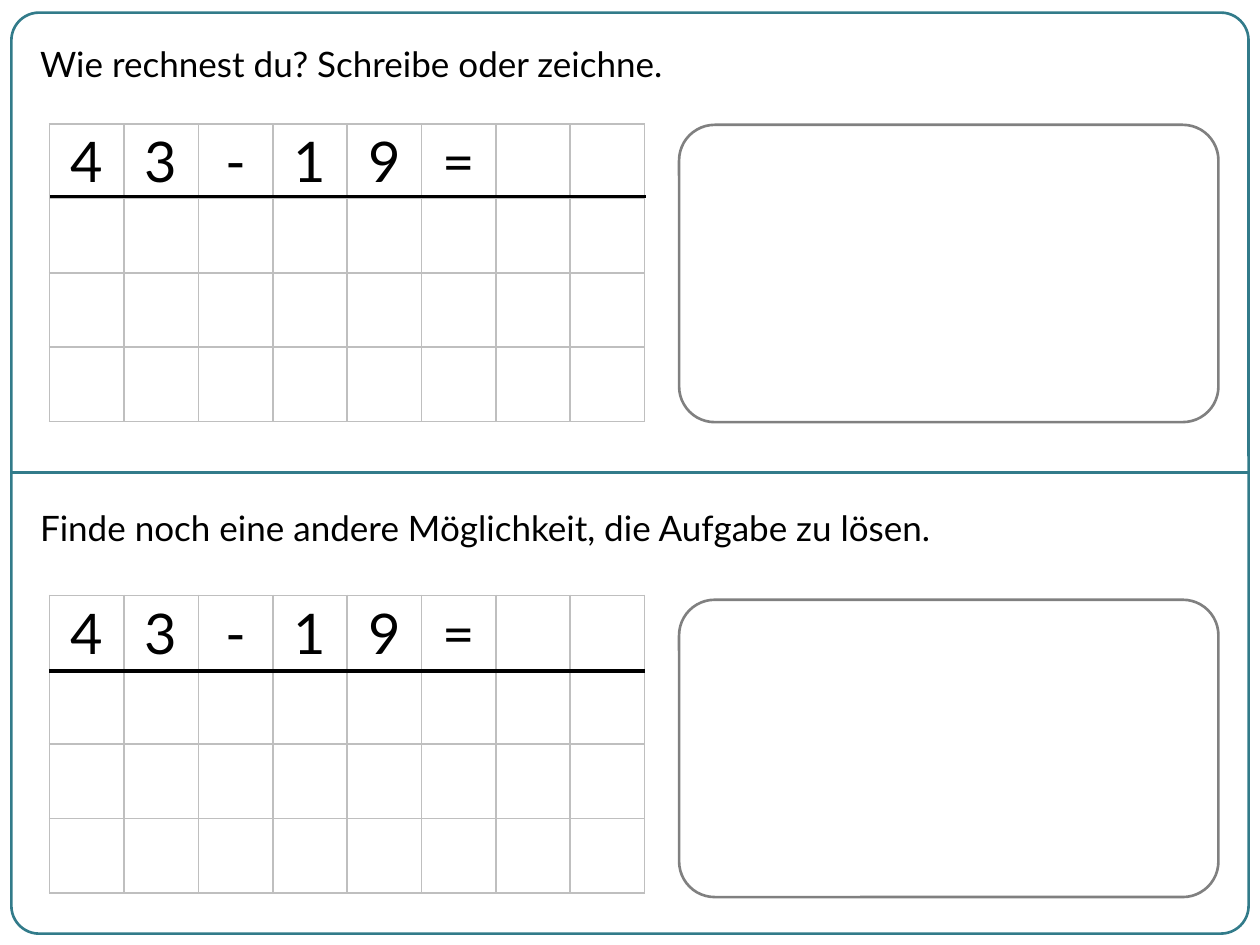
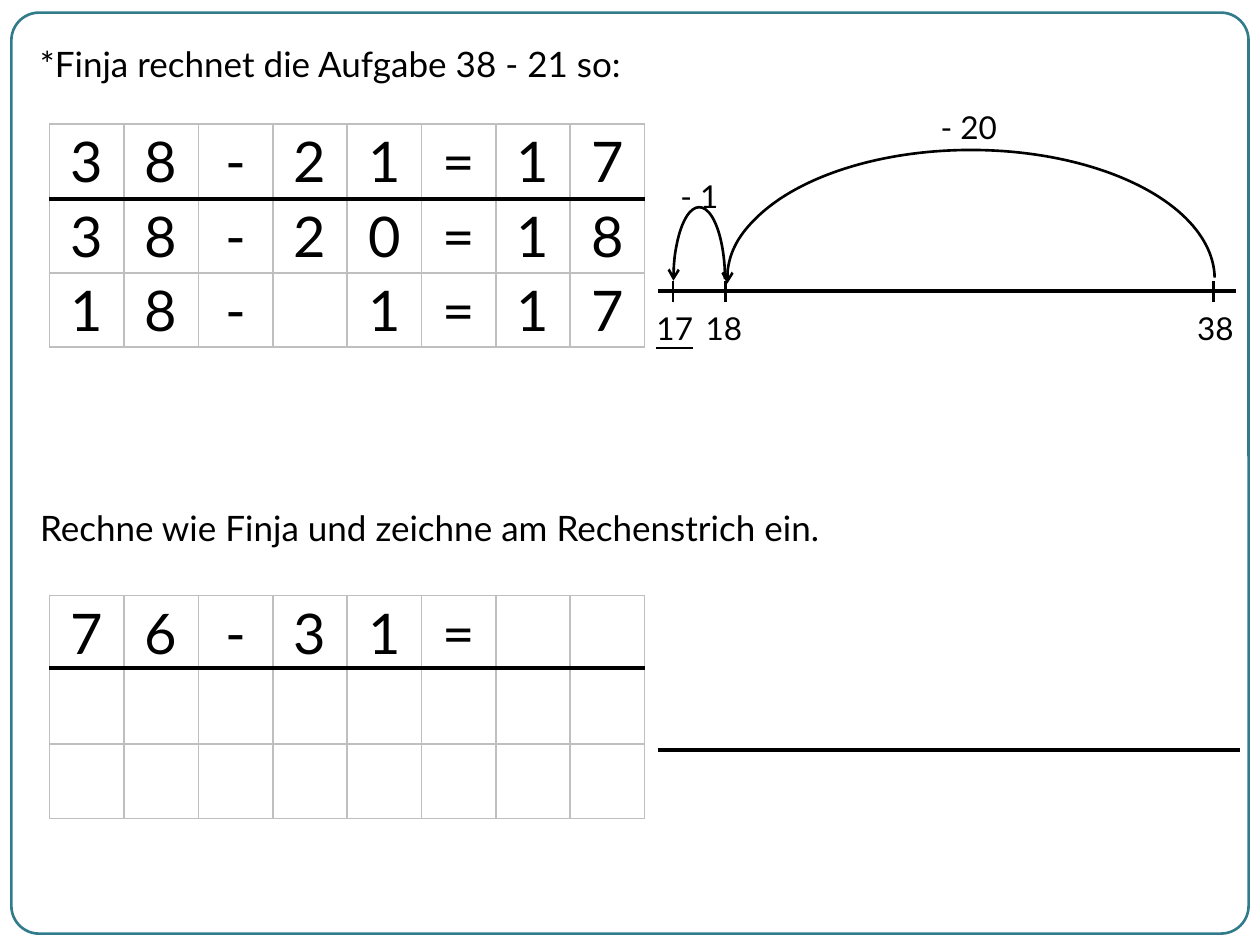
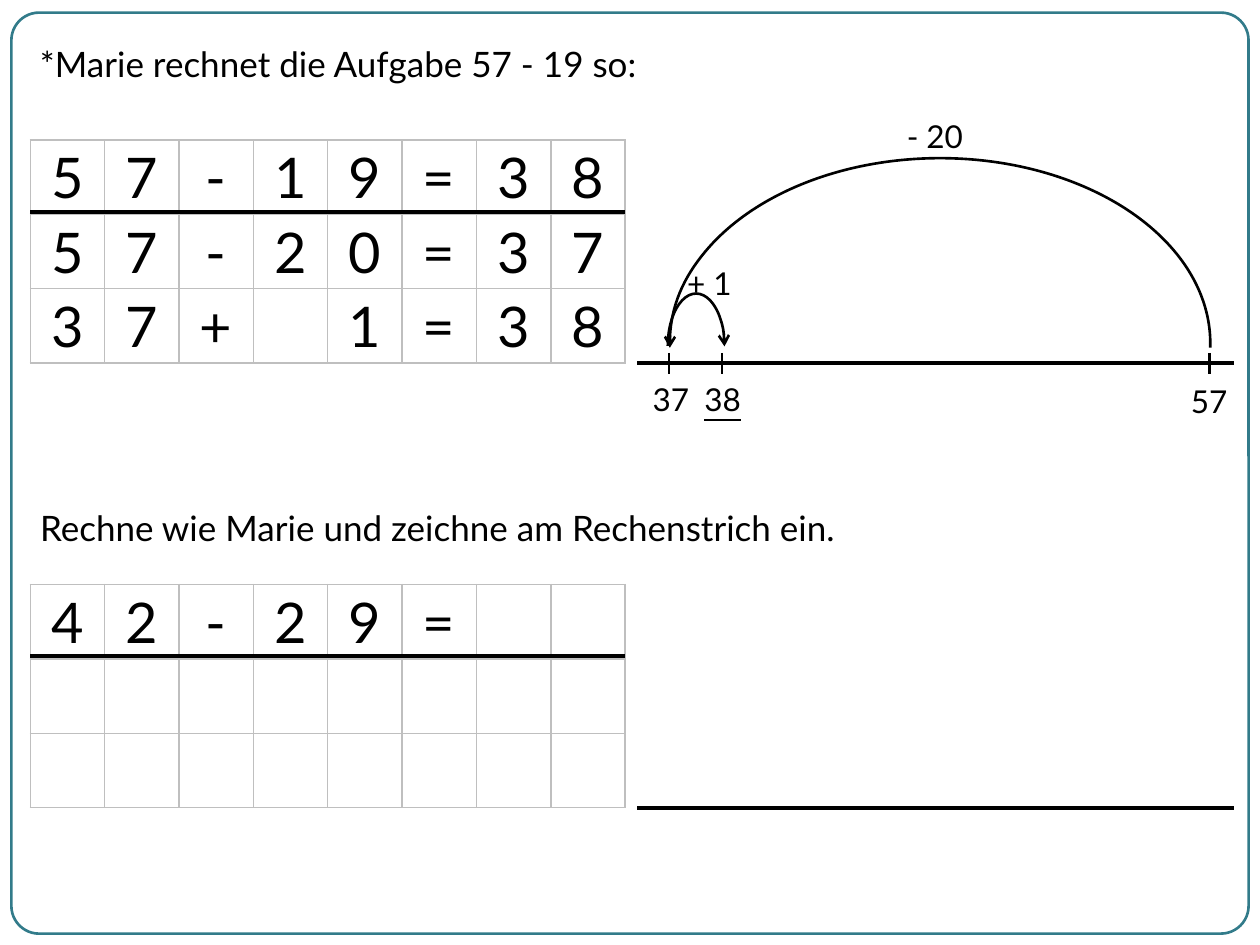
"""Three worksheets on written subtraction with squared grids and number lines."""
from lxml import etree
from pptx import Presentation
from pptx.dml.color import RGBColor
from pptx.enum.shapes import MSO_CONNECTOR, MSO_SHAPE
from pptx.enum.text import MSO_ANCHOR, MSO_AUTO_SIZE, PP_ALIGN
from pptx.oxml import parse_xml
from pptx.oxml.ns import nsdecls, qn
from pptx.util import Pt

ROUND, ARC = MSO_SHAPE.ROUNDED_RECTANGLE, MSO_SHAPE.ARC
STRAIGHT = MSO_CONNECTOR.STRAIGHT
LEFT, CENTER = PP_ALIGN.LEFT, PP_ALIGN.CENTER
MIDDLE, GROW = MSO_ANCHOR.MIDDLE, MSO_AUTO_SIZE.SHAPE_TO_FIT_TEXT

TEAL = RGBColor(0x32, 0x7B, 0x8A)
BLACK = RGBColor(0, 0, 0)
GRAY = RGBColor(0x80, 0x80, 0x80)
SILVER = RGBColor(0xBF, 0xBF, 0xBF)

CELL, COLS = 42.5, 8
FRAME = (ROUND, 6.5, 7.2, 707, 526.3, 0, False, (0.03,), TEAL)
PLAIN = {"first_row": False, "horz_banding": False}
INSET = {"margin_left": 0, "margin_right": 0, "margin_top": 0,
         "margin_bottom": 0, "vertical_anchor": MIDDLE}

SHEETS = [
    {
        "titles": [("Wie rechnest du? Schreibe oder zeichne.", 20.9, 668.9),
                   ("Finde noch eine andere Möglichkeit, die Aufgabe zu lösen.", 285.8, 668.9)],
        "grids": [(28.4, 70.9, ["43-19=", "", "", ""]),
                  (28.4, 340.2, ["43-19=", "", "", ""])],
        "rules": [(28.8, 112.3, 369.4, BLACK, 2.25), (28.1, 383.5, 368.6, BLACK, 2.25),
                  (6.5, 270, 713.5, TEAL, 1.5)],
        "shapes": [(ROUND, 457.2, y, 169.9, 308.2, 90, False, (0.12,), GRAY)
                   for y in (2.2, 273.6)],
        "ticks": (0, []),
        "labels": [],
    },
    {
        "titles": [("*Finja rechnet die Aufgabe 38 - 21 so:", 20.9, 515.5),
                   ("Rechne wie Finja und zeichne am Rechenstrich ein.", 285.8, 691.9)],
        "grids": [(28.4, 70.9, ["38-21=17", "38-20=18", "18- 1=17"]),
                  (28.4, 340.2, ["76-31=", "", ""])],
        "rules": [(28.1, 113.5, 368.6, BLACK, 2.25), (28.1, 381.6, 368.6, BLACK, 2.25),
                  (375.8, 166.3, 706.3, BLACK, 2.25), (375.8, 428.4, 708.5, BLACK, 2.25)],
        "shapes": [(ARC, 481, 20.2, 147.6, 278.6, 270, True, (162.22, 54.65), BLACK),
                   (ARC, 357.8, 145.4, 83.5, 29.5, 270, True, (163.45, 54.65), BLACK)],
        "ticks": (166.3, [384.5, 414.7, 693.4]),
        "labels": [("17", 366.5, 172.8, 38.2, True), ("18", 394.6, 172.8, 38.2, False),
                   ("38", 675.4, 172.8, 38.2, False), ("- 1", 369.4, 97.9, 60.5, False),
                   ("- 20", 523.4, 58.3, 60.5, False)],
    },
    {
        "titles": [("*Marie rechnet die Aufgabe 57 - 19 so:", 20.9, 515.5),
                   ("Rechne wie Marie und zeichne am Rechenstrich ein.", 285.8, 691.9)],
        "grids": [(17.3, 79.9, ["57-19=38", "57-20=37", "37+ 1=38"]),
                  (17.3, 334.1, ["42-29=", "", ""])],
        "rules": [(17.3, 121, 357.1, BLACK, 2.25), (17.3, 375.1, 357.1, BLACK, 2.25),
                  (364.3, 207.4, 704.9, BLACK, 2.25), (364.3, 461.5, 704.9, BLACK, 2.25)],
        "shapes": [(ARC, 431.3, 41.8, 211.7, 308.9, 270, True, (161.45, 54.56), BLACK),
                   (ARC, 367.9, 181.4, 59.8, 32.4, 270, False, (162, 54.65), BLACK)],
        "ticks": (207.4, [382.3, 412.6, 691.2]),
        "labels": [("37", 364.3, 213.8, 38.2, False), ("38", 393.8, 213.8, 38.2, True),
                   ("57", 671.8, 214.6, 38.2, False), ("- 20", 504, 63.4, 60.5, False),
                   ("+ 1", 375.1, 147.6, 60.5, False)],
    },
]


def write(frame, words, size, align, under=False):
    para = frame.paragraphs[0]
    para.alignment = align
    run = para.add_run()
    run.text = words
    style = {"name": "Lato", "size": Pt(size), "underline": under or None}
    for key, value in style.items():
        setattr(run.font, key, value)
    run.font.color.rgb = BLACK


def stroke(slide, x1, y1, x2, y2, color, weight):
    line = slide.shapes.add_connector(STRAIGHT, Pt(x1), Pt(y1), Pt(x2), Pt(y2))
    line.line.color.rgb = color
    line.line.width = Pt(weight)
    etree.SubElement(line.element.spPr, qn("a:effectLst"))


deck = Presentation()
deck.slide_width, deck.slide_height = Pt(720), Pt(540)

for sheet in SHEETS:
    slide = deck.slides.add_slide(deck.slide_layouts[6])

    for kind, x, y, w, h, turn, flip, bends, color in [FRAME] + sheet["shapes"]:
        shape = slide.shapes.add_shape(kind, Pt(x), Pt(y), Pt(w), Pt(h))
        shape.shadow.inherit = False
        shape.fill.background()
        shape.line.color.rgb = color
        shape.line.width = Pt(1.5)
        shape.rotation = turn
        for i, bend in enumerate(bends):
            shape.adjustments[i] = bend
        if flip:
            shape.element.spPr.find(qn("a:xfrm")).set("flipV", "1")
        if kind == ARC:
            edge = shape.element.spPr.find(qn("a:ln"))
            etree.SubElement(edge, qn("a:tailEnd"), type="arrow")

    texts = [(words, 15.8, y, w, 31.7, 20, LEFT, False) for words, y, w in sheet["titles"]]
    texts += [(words, x, y, w, 28.8, 18, CENTER, under)
              for words, x, y, w, under in sheet["labels"]]
    for words, x, y, w, h, size, align, under in texts:
        box = slide.shapes.add_textbox(Pt(x), Pt(y), Pt(w), Pt(h))
        box.text_frame.word_wrap = True
        box.text_frame.auto_size = GROW
        write(box.text_frame, words, size, align, under)

    for x, y, rows in sheet["grids"]:
        grid = slide.shapes.add_table(len(rows), COLS, Pt(x), Pt(y),
                                      Pt(CELL * COLS), Pt(CELL * len(rows))).table
        for key, value in PLAIN.items():
            setattr(grid, key, value)
        for col in grid.columns:
            col.width = Pt(CELL)
        for r, row in enumerate(rows):
            grid.rows[r].height = Pt(CELL)
            for c, sign in enumerate(row.ljust(COLS)):
                cell = grid.cell(r, c)
                cell.fill.background()
                for key, value in INSET.items():
                    setattr(cell, key, value)
                if sign != " ":
                    write(cell.text_frame, sign, 32, CENTER)
                props = cell._tc.get_or_add_tcPr()
                for i, side in enumerate("LRTB"):
                    props.insert(i, parse_xml(
                        f'<a:ln{side} {nsdecls("a")} w="{Pt(1)}"><a:solidFill>'
                        f'<a:srgbClr val="{SILVER}"/></a:solidFill></a:ln{side}>'))

    for x1, y, x2, color, weight in sheet["rules"]:
        stroke(slide, x1, y, x2, y, color, weight)

    level, spots = sheet["ticks"]
    for x in spots:
        stroke(slide, x, level - 5.7, x, level + 6.5, BLACK, 1.5)

deck.save("out.pptx")
